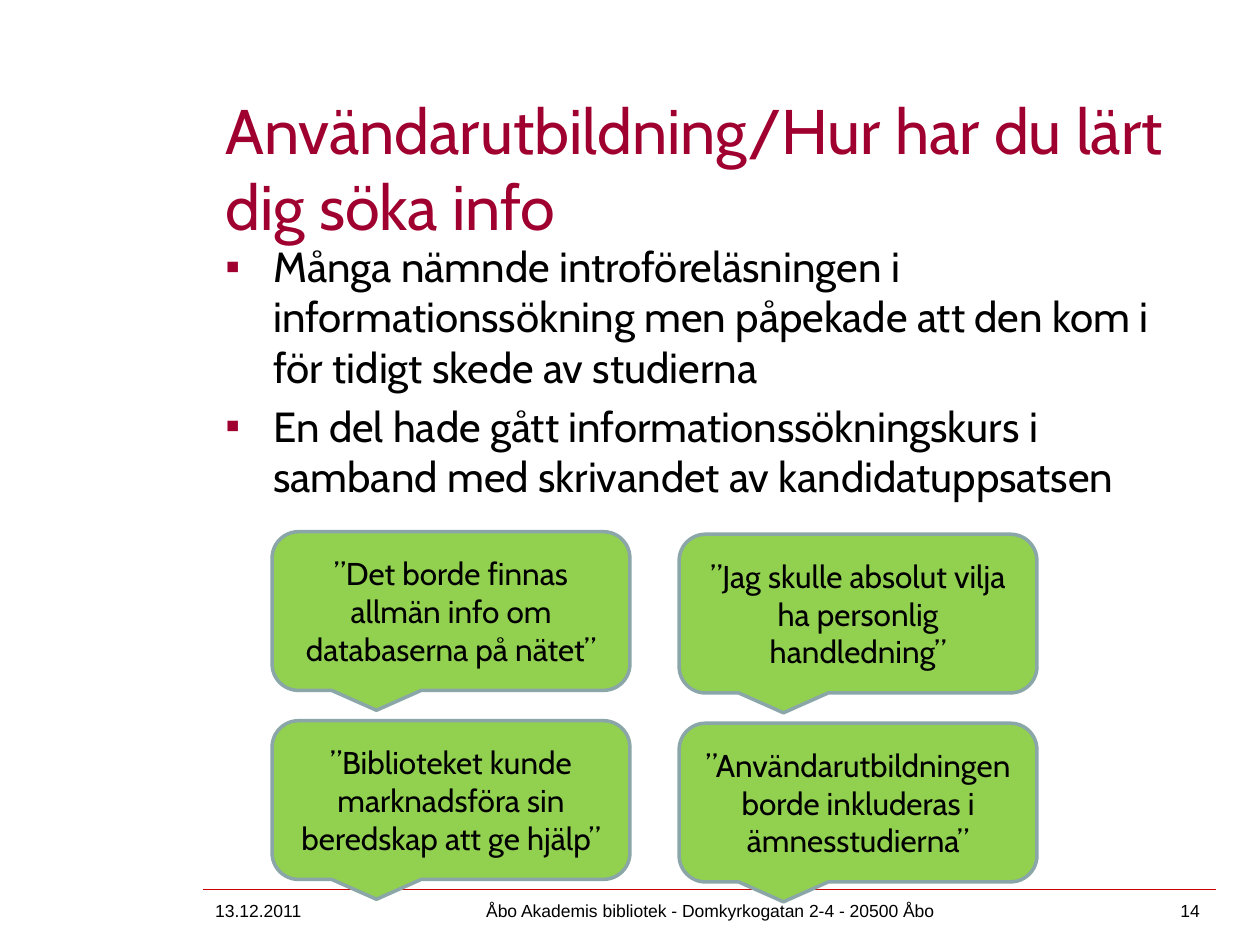
from lxml import etree
from pptx import Presentation
from pptx.dml.color import RGBColor
from pptx.enum.shapes import MSO_CONNECTOR, MSO_SHAPE
from pptx.enum.text import MSO_ANCHOR, PP_ALIGN
from pptx.oxml.ns import qn
from pptx.util import Inches, Pt

LEFT, CENTER, RIGHT = PP_ALIGN.LEFT, PP_ALIGN.CENTER, PP_ALIGN.RIGHT
TOP, MIDDLE = MSO_ANCHOR.TOP, MSO_ANCHOR.MIDDLE
STRAIGHT = MSO_CONNECTOR.STRAIGHT
CALLOUT = MSO_SHAPE.ROUNDED_RECTANGULAR_CALLOUT
HEADING_FONT, FOOTER_FONT = "Cabin", "Arial"
WINE, BLACK, RED, GREEN, GREY = "A0002F", "000000", "CC0000", "92D050", "8AA6A8"

TITLE = "Användarutbildning/Hur har du lärt dig söka info"
POINTS = [
    "Många nämnde introföreläsningen i informationssökning men påpekade att den kom i för tidigt skede av studierna",
    "En del hade gått informationssökningskurs i samband med skrivandet av kandidatuppsatsen",
]
QUOTES = [
    "”Det borde finnas allmän info om databaserna på nätet”",
    "”Jag skulle absolut vilja ha personlig handledning”",
    "”Biblioteket kunde marknadsföra sin beredskap att ge hjälp”",
    "”Användarutbildningen borde inkluderas i ämnesstudierna”",
]


def color(value):
    """Turn a hex string into a colour."""
    return RGBColor.from_string(value)


def add_span(para, text, size, font=HEADING_FONT, shade=BLACK, align=LEFT):
    """Add one formatted run to a paragraph."""
    para.alignment = align
    span = para.add_run()
    span.text = text
    span.font.size = Pt(size)
    span.font.name = font
    span.font.color.rgb = color(shade)


def add_text_box(page, left, top, width, height):
    """Add a wrapping, top-anchored text box and return its frame."""
    box = page.shapes.add_textbox(Inches(left), Inches(top), Inches(width), Inches(height))
    frame = box.text_frame
    frame.word_wrap = True
    frame.vertical_anchor = TOP
    return frame


def set_bullet(para, indent):
    """Give a paragraph a hanging square bullet."""
    properties = para._p.get_or_add_pPr()
    properties.set("marL", str(Inches(indent)))
    properties.set("indent", str(-Inches(indent)))
    shade = etree.SubElement(properties, qn("a:buClr"))
    etree.SubElement(shade, qn("a:srgbClr"), val=WINE)
    etree.SubElement(properties, qn("a:buFont"), typeface=FOOTER_FONT)
    etree.SubElement(properties, qn("a:buChar"), char="▪")


def add_title(page, left, top, width, height):
    """Place the slide title."""
    frame = add_text_box(page, left, top, width, height)
    add_span(frame.paragraphs[0], TITLE, 36, shade=WINE)


def add_points(page, left, top, width, height):
    """Place the bulleted findings."""
    frame = add_text_box(page, left, top, width, height)
    for index, text in enumerate(POINTS):
        para = frame.add_paragraph() if index else frame.paragraphs[0]
        set_bullet(para, 0.38)
        if index:
            para.space_before = Pt(4.8)
        add_span(para, text, 24)


def add_footer(page, left, top, width, height):
    """Place the rule with the date, address and page number below it."""
    rule = page.shapes.add_connector(
        STRAIGHT, Inches(left), Inches(top), Inches(left + width), Inches(top)
    )
    rule.line.color.rgb = color(RED)
    rule.line.width = Pt(1)
    etree.SubElement(rule._element.spPr, qn("a:effectLst"))
    parts = [
        (0, 1.57, "13.12.2011", LEFT),
        (1.74, 4.57, "Åbo Akademis bibliotek - Domkyrkogatan 2-4 - 20500 Åbo", CENTER),
        (6.46, 1.55, "14", RIGHT),
    ]
    for offset, part_width, text, align in parts:
        frame = add_text_box(page, left + offset, top + 0.03, part_width, height - 0.03)
        add_span(frame.paragraphs[0], text, 10, FOOTER_FONT, align=align)


def add_quote(page, left, top, width, height, text):
    """Place one quotation in a speech bubble."""
    bubble = page.shapes.add_shape(
        CALLOUT, Inches(left), Inches(top), Inches(width), Inches(height)
    )
    bubble.shadow.inherit = False
    bubble.fill.solid()
    bubble.fill.fore_color.rgb = color(GREEN)
    bubble.line.color.rgb = color(GREY)
    bubble.line.width = Pt(2)
    frame = bubble.text_frame
    frame.word_wrap = True
    frame.vertical_anchor = MIDDLE
    add_span(frame.paragraphs[0], text, 18, align=CENTER)


def add_quotes(page, left, top, width, height):
    """Place the quotations in two columns, the right one slightly lower."""
    bubble_width, bubble_height, drop = 2.84, 1.26, 0.02
    column_step = width - bubble_width
    row_step = height - bubble_height - drop
    for index, text in enumerate(QUOTES):
        row, column = divmod(index, 2)
        add_quote(
            page,
            left + column * column_step,
            top + row * row_step + column * drop,
            bubble_width,
            bubble_height,
            text,
        )


def main():
    """Build and save the slide."""
    deck = Presentation()
    deck.slide_width, deck.slide_height = Inches(10), Inches(7.5)
    page = deck.slides.add_slide(deck.slide_layouts[6])
    add_footer(page, 1.61, 7.06, 8.04, 0.44)
    add_title(page, 1.69, 0.68, 7.95, 1.02)
    add_points(page, 1.69, 1.86, 7.95, 4.8)
    add_quotes(page, 2.16, 4.22, 6.07, 2.78)
    deck.save("out.pptx")


if __name__ == "__main__":
    main()
